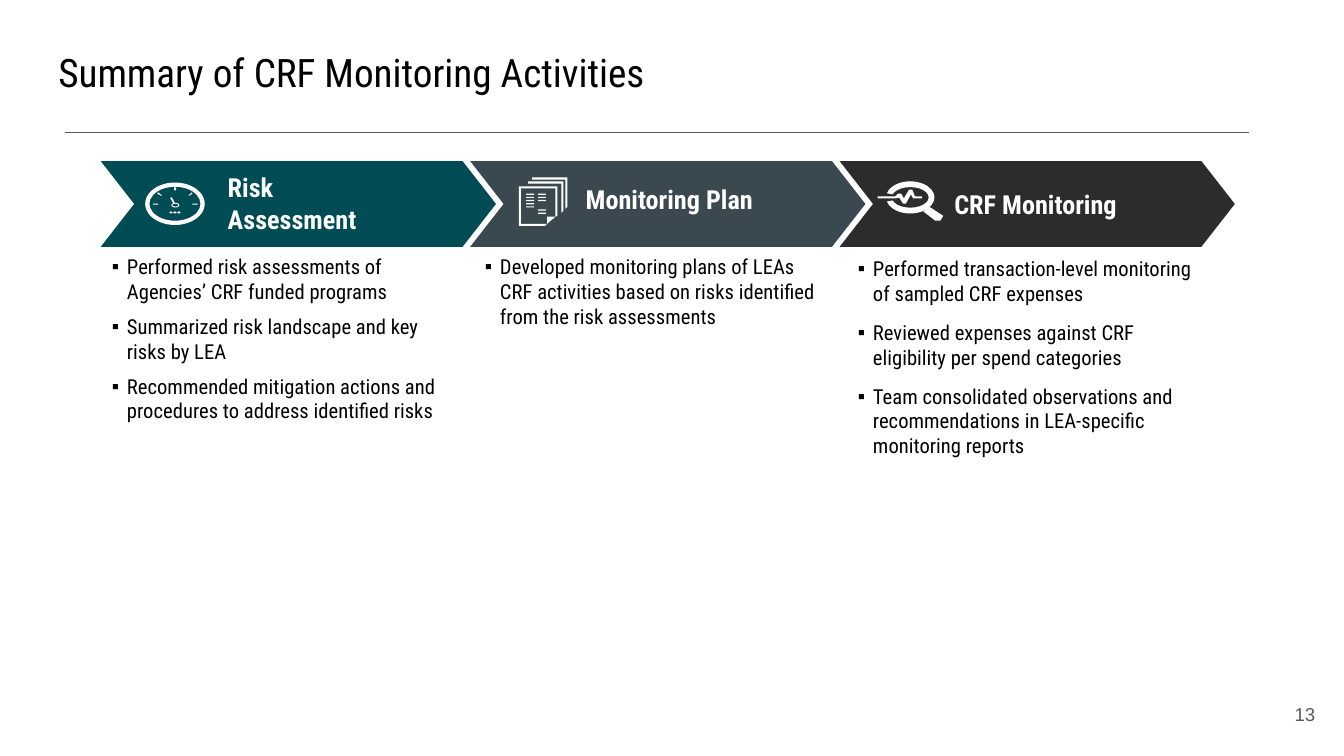
from lxml.etree import SubElement
from pptx import Presentation
from pptx.dml.color import RGBColor
from pptx.enum.shapes import MSO_CONNECTOR, MSO_SHAPE as Preset
from pptx.enum.text import MSO_ANCHOR as Anchor, MSO_AUTO_SIZE, PP_ALIGN as Align
from pptx.oxml.ns import qn
from pptx.util import Cm, Pt

BLACK = RGBColor(0x00, 0x00, 0x00)
WHITE = RGBColor(0xFF, 0xFF, 0xFF)
GRAY = RGBColor(0x59, 0x59, 0x59)
TEAL = RGBColor(0x00, 0x4C, 0x54)
SLATE = RGBColor(0x3A, 0x49, 0x50)
CHARCOAL = RGBColor(0x2C, 0x2C, 0x2C)


def write(shape, lines, size, color=BLACK, font="Roboto Condensed", bold=False,
          align=Align.LEFT, anchor=Anchor.TOP, inset=0, space_after=0, bullet=None):
    """Fill the shape with one formatted paragraph per line."""
    frame = shape.text_frame
    frame.word_wrap = True
    frame.auto_size = MSO_AUTO_SIZE.NONE
    frame.vertical_anchor = anchor
    frame.margin_left = frame.margin_right = Cm(inset)
    frame.margin_top = frame.margin_bottom = Cm(inset)
    frame.text = "\n".join(lines)
    for paragraph in frame.paragraphs:
        if bullet:
            properties = paragraph._p.get_or_add_pPr()
            properties.set("marL", str(Cm(0.38)))
            properties.set("indent", str(-Cm(0.38)))
            SubElement(properties, qn("a:buFont")).set("typeface", "Arial")
            SubElement(properties, qn("a:buChar")).set("char", bullet)
        paragraph.alignment = align
        paragraph.space_before = Pt(0)
        paragraph.space_after = Pt(space_after)
        text_font = paragraph.runs[0].font
        text_font.name = font
        text_font.size = Pt(size)
        text_font.bold = bold
        text_font.color.rgb = color


def paint(shape, color):
    shape.shadow.inherit = False
    shape.fill.solid()
    shape.fill.fore_color.rgb = color
    shape.line.fill.background()


presentation = Presentation()
presentation.slide_width = Cm(33.87)
presentation.slide_height = Cm(19.05)
slide = presentation.slides.add_slide(presentation.slide_layouts[4])
shapes = slide.shapes
bodies = {body.placeholder_format.idx: body for body in slide.placeholders}
unused = bodies.pop(1).element
unused.getparent().remove(unused)

# Title and rule
title = shapes.title
title.left, title.top, title.width, title.height = Cm(1.14), Cm(0.89), Cm(31.55), Cm(2.13)
write(title, ["Summary of CRF Monitoring Activities"], 28, inset=0.33)

rule = shapes.add_connector(MSO_CONNECTOR.STRAIGHT, Cm(1.65), Cm(3.35), Cm(31.47), Cm(3.35))
rule.line.color.rgb = GRAY
rule.line.width = Pt(0.75)
SubElement(rule._element.spPr, qn("a:effectLst"))

# Stages: color, label lines, label box, list placeholder, list top, list height, gap, items
stages = [
    (TEAL, ["Risk", "Assessment"], (5.74, 4.32, 10.46, 1.6), 2, 6.4, 4.27, 7.4,
     ["Performed risk assessments of Agencies’ CRF funded programs",
      "Summarized risk landscape and key risks by LEA",
      "Recommended mitigation actions and procedures to address identified risks"]),
    (SLATE, ["Monitoring Plan"], (14.76, 4.62, 8.28, 0.79), 3, 6.4, 1.88, 7.4,
     ["Developed monitoring plans of LEAs CRF activities based on risks identified "
      "from the risk assessments"]),
    (CHARCOAL, ["CRF Monitoring"], (24.05, 4.74, 8.28, 0.79), 4, 6.45, 5.13, 10.3,
     ["Performed transaction-level monitoring of sampled CRF expenses",
      "Reviewed expenses against CRF eligibility per spend categories",
      "Team consolidated observations and recommendations in LEA-specific "
      "monitoring reports"]),
]
for index, (color, label, box, body_idx, top, height, gap, items) in enumerate(stages):
    chevron = shapes.add_shape(Preset.CHEVRON, Cm(2.54 + 9.31 * index), Cm(4.06),
                               Cm(9.96), Cm(2.16))
    chevron.adjustments[0] = 0.39
    paint(chevron, color)

    body = bodies[body_idx]
    body.left, body.top = Cm(2.82 + 9.4 * index), Cm(top)
    body.width, body.height = Cm(8.66), Cm(height)
    write(body, items, 14.7, space_after=gap, bullet="▪")

for _, label, box, *_ in stages:
    label_box = shapes.add_textbox(*map(Cm, box))
    write(label_box, label, 18.7, color=WHITE, bold=True, anchor=Anchor.MIDDLE)

# Icon parts: preset, left, top, width, height, adjustments
gauge = [
    (Preset.DONUT, 3.66, 4.6, 1.5, 1.07, [0.1]),
    (Preset.DONUT, 4.32, 5.11, 0.2, 0.12, [0.2]),
    (Preset.RECTANGLE, 3.86, 5.13, 0.13, 0.03, []),
    (Preset.RECTANGLE, 4.85, 5.13, 0.13, 0.03, []),
    (Preset.RECTANGLE, 4.39, 4.72, 0.05, 0.08, []),
]
gauge += [(Preset.OVAL, 4.27 + 0.1 * dot, 5.33, 0.08, 0.05, []) for dot in range(3)]
text_rows = [(13.26, row) for row in range(5)] + [(13.56, row) for row in (0, 1, 2, 5, 6)]
page_text = [(Preset.RECTANGLE, left, 4.88 + 0.08 * row, 0.2, 0.03, [])
             for left, row in text_rows]
# Block arc angles are in units of 5/3 degree
lens = [(Preset.BLOCK_ARC, 22.33, 4.57, 1.22, 0.81, [190 * 0.6, 170 * 0.6, 0.18])]

for preset, left, top, width, height, adjustments in gauge + page_text + lens:
    part = shapes.add_shape(preset, Cm(left), Cm(top), Cm(width), Cm(height))
    for position, value in enumerate(adjustments):
        part.adjustments[position] = value
    paint(part, WHITE)

needle = [(4.29, 4.99), (4.33, 4.97), (4.41, 5.12), (4.37, 5.13)]
left_tick = [(4.09, 4.93), (4.06, 4.93), (3.96, 4.88), (3.99, 4.85)]
right_tick = [(4.85, 4.88), (4.78, 4.93), (4.75, 4.93), (4.83, 4.85)]
back_sheets = [
    [(x, y), (x + 0.89, y), (x + 0.89, y + 0.74), (x + 0.84, y + 0.79),
     (x + 0.84, y + 0.06), (x, y + 0.06)]
    for x, y in [(13.41, 4.47), (13.31, 4.57)]
]
front_sheet = [(14.05, 4.7), (14.05, 5.44), (14, 5.46), (14, 4.75), (13.13, 4.75),
               (13.13, 5.64), (13.79, 5.64), (13.74, 5.69), (13.08, 5.69), (13.08, 4.7)]
page_fold = [(14, 5.46), (13.79, 5.64), (13.79, 5.46)]
lens_handle = [(23.42, 5.21), (23.77, 5.44), (23.7, 5.56), (23.57, 5.56), (23.27, 5.33)]
pulse = [(22.12, 4.95), (22.56, 4.95), (22.63, 4.88), (22.71, 4.88), (22.78, 5),
         (22.91, 4.78), (22.99, 4.78), (23.06, 4.95), (23.24, 4.95), (23.24, 5),
         (23.01, 5), (22.96, 4.9), (22.83, 5.13), (22.76, 5.13), (22.66, 4.98),
         (22.58, 5), (22.12, 5)]
outlines = [needle, left_tick, right_tick, *back_sheets, front_sheet, page_fold,
            lens_handle, pulse]
for outline in outlines:
    points = [(Cm(x), Cm(y)) for x, y in outline]
    builder = shapes.build_freeform(*points[0])
    builder.add_line_segments(points[1:], close=True)
    paint(builder.convert_to_shape(), WHITE)

# Page number
page_number = shapes.add_textbox(Cm(31.37), Cm(17.27), Cm(2.03), Cm(1.45))
write(page_number, ["13"], 13.3, color=GRAY, font="Arial", align=Align.RIGHT,
      anchor=Anchor.MIDDLE, inset=0.25)

presentation.save("out.pptx")
